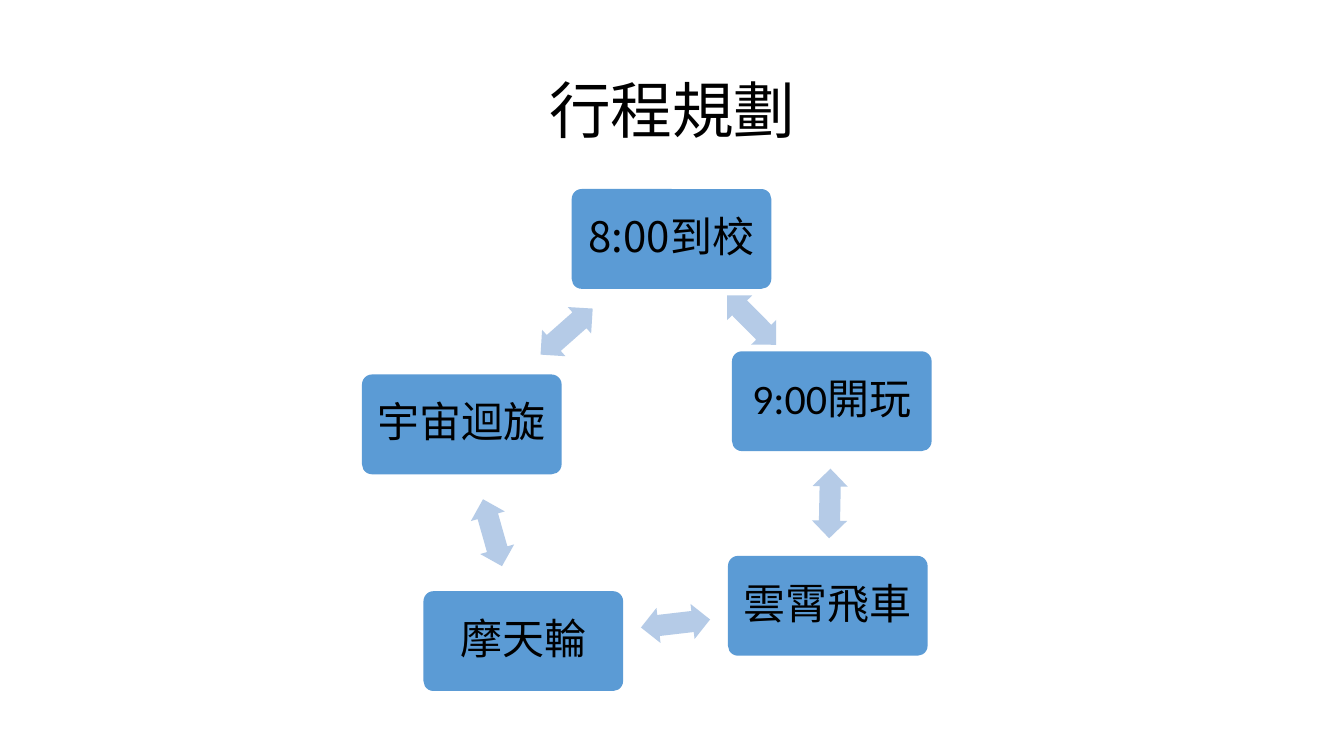
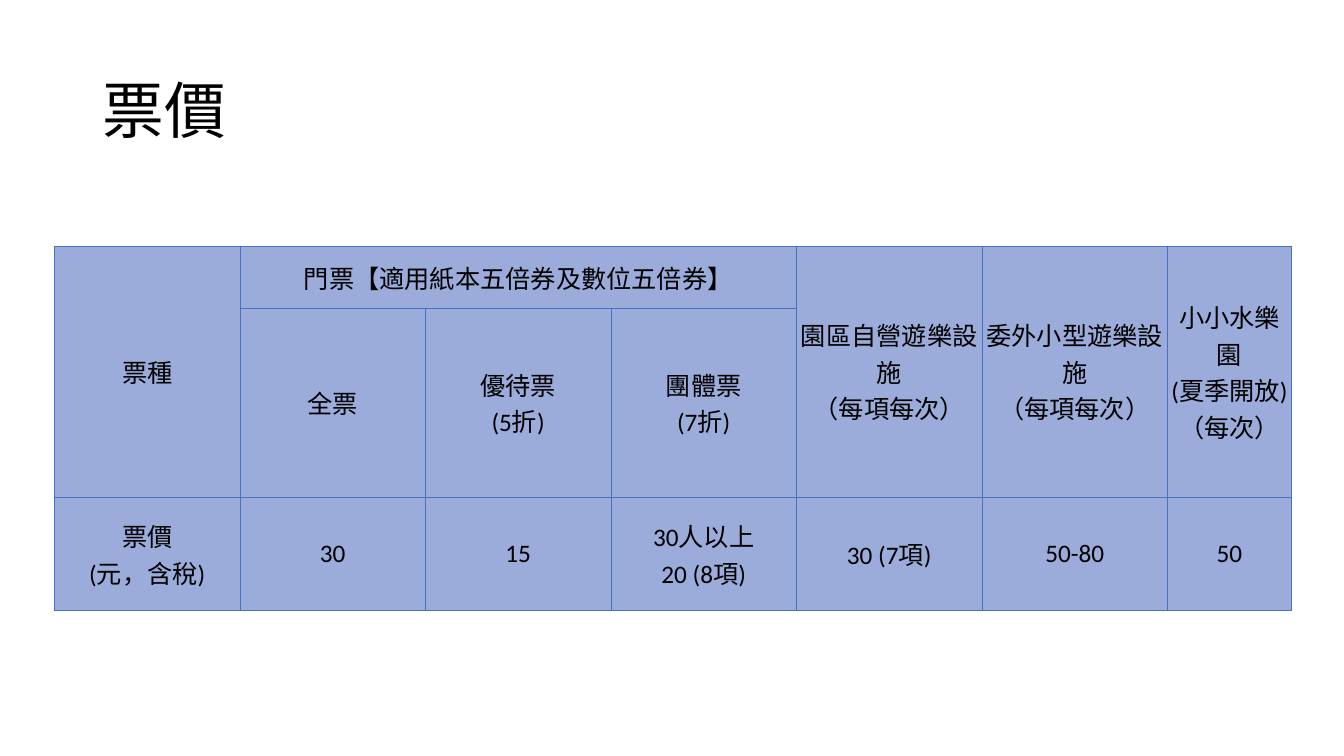
import math

from lxml import etree
from pptx import Presentation
from pptx import util as u
from pptx.dml.color import RGBColor
from pptx.enum import shapes, text
from pptx.oxml import ns

BLACK = RGBColor(0x00, 0x00, 0x00)
BOX_BLUE = RGBColor(0x5B, 0x9B, 0xD5)
ARROW_BLUE = RGBColor(0xB5, 0xCB, 0xE7)
CELL_BLUE = RGBColor(0x9B, 0xAB, 0xDA)
BORDER_BLUE = RGBColor(0x44, 0x72, 0xC4)
LATIN_FONT = "Calibri"
CHINESE_FONT = "Noto Sans CJK JP"
CENTER = text.PP_ALIGN.CENTER
MIDDLE = text.MSO_ANCHOR.MIDDLE

presentation = Presentation()
presentation.slide_width = u.Inches(13.33)
presentation.slide_height = u.Inches(7.5)


def write(paragraph, content, size, align, font=LATIN_FONT):
    """Write the lines of content as runs with line breaks between them."""
    paragraph.alignment = align
    for number, line in enumerate(content.split("\n")):
        if number:
            paragraph.add_line_break()
        run = paragraph.add_run()
        run.text = line
        run.font.size = u.Pt(size)
        run.font.name = font
        run.font.color.rgb = BLACK
        east_asian = etree.SubElement(run.font._element, ns.qn("a:ea"))
        east_asian.set("typeface", CHINESE_FONT)


def add_titled_slide(title, align):
    slide = presentation.slides.add_slide(presentation.slide_layouts[5])
    shape = slide.shapes.title
    shape.left, shape.top = u.Inches(0.92), u.Inches(0.4)
    shape.width, shape.height = u.Inches(11.5), u.Inches(1.45)
    shape.text_frame.vertical_anchor = MIDDLE
    paragraph = shape.text_frame.paragraphs[0]
    paragraph.line_spacing = 0.9
    write(paragraph, title, 44, align, CHINESE_FONT)
    return slide


# Slide 1: cycle of stops, with an arrow halfway between neighbours
slide = add_titled_slide("行程規劃", CENTER)
BOX_WIDTH, BOX_HEIGHT = 1.98, 0.99
ARROW_WIDTH, ARROW_HEIGHT = 0.69, 0.35
stops = [  # label, centre x, centre y, font
    ("8:00到校", 6.66, 2.37, CHINESE_FONT),
    ("9:00開玩", 8.25, 3.98, LATIN_FONT),
    ("雲霄飛車", 8.21, 6.01, LATIN_FONT),
    ("摩天輪", 5.19, 6.36, LATIN_FONT),
    ("宇宙迴旋", 4.58, 4.21, LATIN_FONT),
]
for index, (label, x, y, font) in enumerate(stops):
    box = slide.shapes.add_shape(
        shapes.MSO_SHAPE.ROUNDED_RECTANGLE,
        u.Inches(x - BOX_WIDTH / 2), u.Inches(y - BOX_HEIGHT / 2),
        u.Inches(BOX_WIDTH), u.Inches(BOX_HEIGHT))
    box.adjustments[0] = 0.1
    frame = box.text_frame
    frame.word_wrap = True
    frame.vertical_anchor = MIDDLE
    frame.margin_left = frame.margin_right = u.Inches(0.12)
    frame.margin_top = frame.margin_bottom = u.Inches(0.12)
    frame.paragraphs[0].line_spacing = 0.9
    write(frame.paragraphs[0], label, 30, CENTER, font)

    next_x, next_y = stops[(index + 1) % len(stops)][1:3]
    arrow = slide.shapes.add_shape(
        shapes.MSO_SHAPE.LEFT_RIGHT_ARROW,
        u.Inches((x + next_x - ARROW_WIDTH) / 2),
        u.Inches((y + next_y - ARROW_HEIGHT) / 2),
        u.Inches(ARROW_WIDTH), u.Inches(ARROW_HEIGHT))
    arrow.adjustments[0] = 0.6
    arrow.adjustments[1] = 0.5
    arrow.rotation = math.degrees(math.atan2(next_y - y, next_x - x)) % 360

    for shape, color in ((box, BOX_BLUE), (arrow, ARROW_BLUE)):
        shape.fill.solid()
        shape.fill.fore_color.rgb = color
        shape.line.fill.background()
        shape.shadow.inherit = False

# Slide 2: ticket prices
slide = add_titled_slide("票價", text.PP_ALIGN.LEFT)
column_widths = [1.84] * 6 + [1.23]
row_heights = [0.62, 1.54, 1.13]
rows = [  # each cell is a list of paragraphs; None is covered by a merge
    [["票種"], ["門票【適用紙本五倍券及數位五倍券】"], None, None,
     ["園區自營遊樂設施\n（每項每次）"], ["委外小型遊樂設施\n（每項每次）"],
     ["小小水樂園\n(夏季開放)\n（每次）"]],
    [None, ["全票"], ["優待票\n(5折)"], ["團體票\n(7折)"], None, None, None],
    [["票價\n(元，含稅)"], ["30"], ["15"], ["30人以上", "20 (8項)"],
     ["30 (7項)"], ["50-80"], ["50"]],
]
table = slide.shapes.add_table(
    len(rows), len(column_widths), u.Inches(0.54), u.Inches(2.44),
    u.Inches(sum(column_widths)), u.Inches(sum(row_heights))).table
for column, width in zip(table.columns, column_widths):
    column.width = u.Inches(width)
for row, height in zip(table.rows, row_heights):
    row.height = u.Inches(height)

# Merged headings
table.cell(0, 1).merge(table.cell(0, 3))
for column_index in (0, 4, 5, 6):
    table.cell(0, column_index).merge(table.cell(1, column_index))

# Cell text, fill and borders
for row_index, row in enumerate(rows):
    for column_index, paragraphs in enumerate(row):
        cell = table.cell(row_index, column_index)
        cell.vertical_anchor = MIDDLE
        cell.margin_left = cell.margin_right = u.Inches(0.03)
        cell.margin_top = cell.margin_bottom = u.Inches(0.03)
        cell.fill.solid()
        cell.fill.fore_color.rgb = CELL_BLUE
        properties = cell._tc.get_or_add_tcPr()
        for position, side in enumerate(("lnL", "lnR", "lnT", "lnB")):
            border = etree.Element(ns.qn("a:" + side), w=str(u.Pt(0.5)))
            fill = etree.SubElement(border, ns.qn("a:solidFill"))
            etree.SubElement(fill, ns.qn("a:srgbClr"), val=str(BORDER_BLUE))
            properties.insert(position, border)
        for number, content in enumerate(paragraphs or []):
            frame = cell.text_frame
            paragraph = frame.add_paragraph() if number else frame.paragraphs[0]
            write(paragraph, content, 18, CENTER)

presentation.save("out.pptx")
